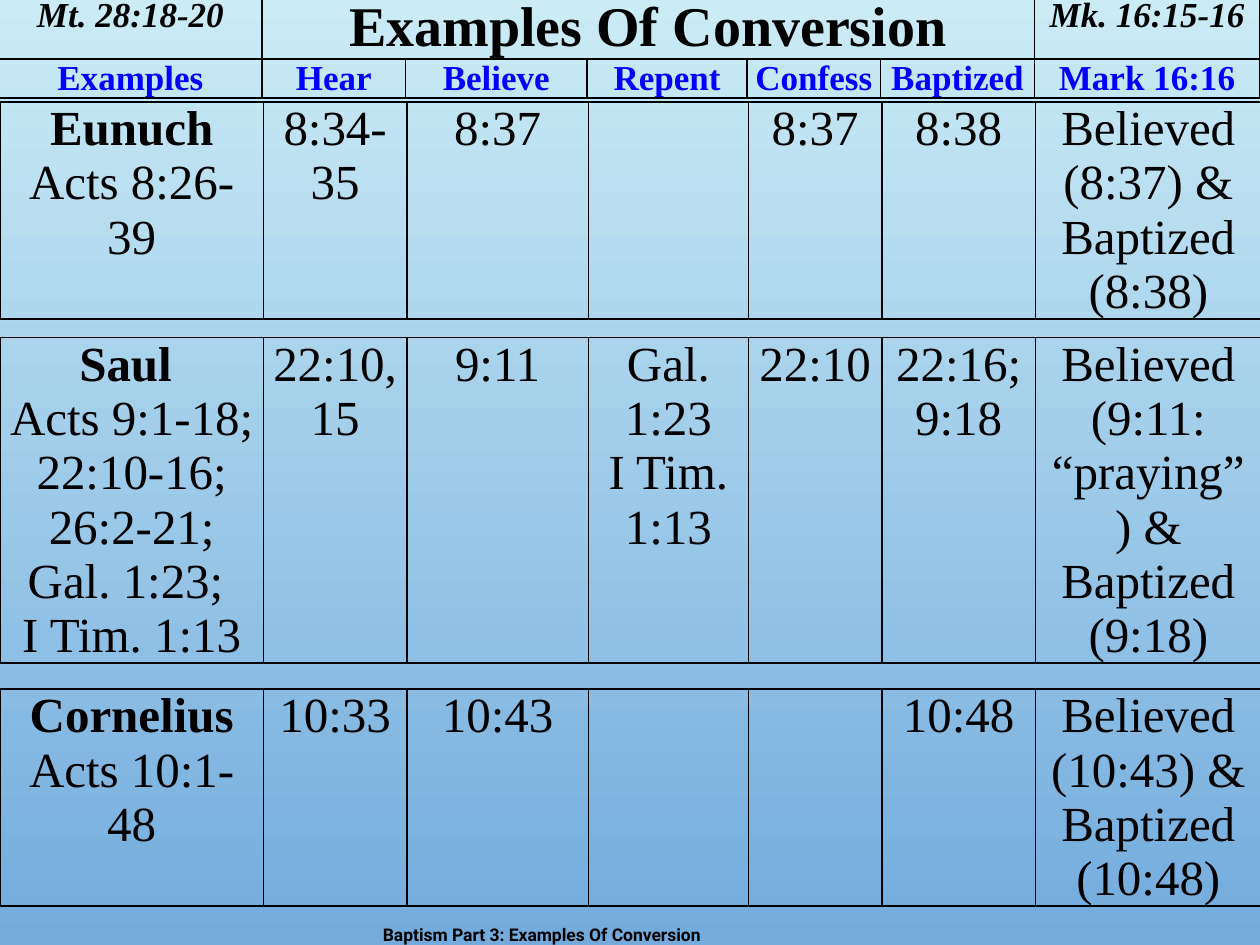
from lxml.etree import SubElement
from pptx import Presentation
from pptx.dml.color import RGBColor
from pptx.enum.text import MSO_ANCHOR, PP_ALIGN
from pptx.oxml.ns import qn
from pptx.util import Inches, Pt

COLORS = {"sky": "CBECF5", "blue": "73ABDD", "ink": "000000", "heading": "0000FF"}
COLUMNS = [20.9, 11.4, 14.4, 12.7, 10.6, 12.2, 17.9]  # per cent of slide width
SERIF = "Times New Roman"

deck = Presentation()
deck.slide_width, deck.slide_height = Inches(10), Inches(7.5)
page = deck.slides.add_slide(deck.slide_layouts[6])


def style(para, size, color="ink", bold=False, italic=False, font=SERIF):
    for span in para.runs:
        span.font.name = font
        span.font.size = Pt(size)
        span.font.bold = bold
        span.font.italic = italic
        span.font.color.rgb = RGBColor.from_string(COLORS[color])


def add_grid(rows, left, top, height, row_heights):
    """Add a bordered, unfilled table; places are per cent of the slide."""
    wide, high = deck.slide_width / 100, deck.slide_height / 100
    frame = page.shapes.add_table(len(rows), len(COLUMNS), int(left * wide), int(top * high),
                                  deck.slide_width, int(height * high))
    table = frame.table
    table.first_row = table.horz_banding = False
    for column, share in zip(table.columns, COLUMNS):
        column.width = int(share * wide)
    for row, share, texts in zip(table.rows, row_heights, rows):
        row.height = int(share * high)
        for cell, text in zip(row.cells, texts):
            cell.margin_left = cell.margin_right = Inches(0.05)
            cell.margin_top = cell.margin_bottom = 0
            for side in ("a:lnL", "a:lnR", "a:lnT", "a:lnB"):
                line = SubElement(cell._tc.get_or_add_tcPr(), qn(side), w=str(Pt(1)))
                SubElement(SubElement(line, qn("a:solidFill")), qn("a:srgbClr"),
                           val=COLORS["ink"])
            cell.fill.background()
            if text:
                cell.text_frame.text = text
            for para in cell.text_frame.paragraphs:
                para.alignment = PP_ALIGN.CENTER
    frame.height = int(height * high)
    return table


# Background, light at the top
fill = page.background.fill
fill.gradient()
fill.gradient_angle = 270
for stop, name, position in zip(fill.gradient_stops, ("sky", "blue"), (0, 1)):
    stop.color.rgb = RGBColor.from_string(COLORS[name])
    stop.position = position

# Title and column headings
header = add_grid(
    [["Mt. 28:18-20", "Examples Of Conversion", "", "", "", "", "Mk. 16:15-16"],
     ["Examples", "Hear", "Believe", "Repent", "Confess", "Baptized", "Mark 16:16"]],
    left=-0.1, top=-0.4, height=11.6, row_heights=[6.67, 2.8])
header.cell(0, 1).merge(header.cell(0, 5))
for index in (0, 6):
    style(header.cell(0, index).text_frame.paragraphs[0], 20, bold=True, italic=True)
style(header.cell(0, 1).text_frame.paragraphs[0], 32, bold=True)
for cell in header.rows[1].cells:
    style(cell.text_frame.paragraphs[0], 20, "heading", bold=True)

# One table for each convert: top, height, cells
examples = [
    (10.8, 24.93, ["Eunuch\nActs 8:26-39", "8:34-35", "8:37", "", "8:37", "8:38",
                   "Believed (8:37) & Baptized (8:38)"]),
    (35.73, 37.33, ["Saul \nActs 9:1-18; 22:10-16; 26:2-21; Gal. 1:23; \nI Tim. 1:13",
                    "22:10, 15", "9:11", "Gal. 1:23\nI Tim. 1:13", "22:10", "22:16; 9:18",
                    "Believed (9:11: “praying”) & Baptized (9:18)"]),
    (72.93, 24.93, ["Cornelius\nActs 10:1-48", "10:33", "10:43", "", "", "10:48",
                    "Believed (10:43) & Baptized (10:48)"]),
]
for top, height, texts in examples:
    table = add_grid([texts], left=0, top=top, height=height, row_heights=[4.93])
    cells = list(table.rows[0].cells)
    for cell in cells:
        for para in cell.text_frame.paragraphs:
            style(para, 28)
    style(cells[0].text_frame.paragraphs[0], 28, bold=True)
    cells[-1].margin_left = cells[-1].margin_right = Inches(0.07)

# Footer
box = page.shapes.add_textbox(int(0.294 * deck.slide_width), int(0.977 * deck.slide_height),
                              int(0.408 * deck.slide_width), int(0.023 * deck.slide_height))
box.text_frame.word_wrap = True
box.text_frame.vertical_anchor = MSO_ANCHOR.MIDDLE
box.text_frame.text = "Baptism Part 3: Examples Of Conversion"
style(box.text_frame.paragraphs[0], 10, bold=True, font="Roboto")

deck.save("out.pptx")
